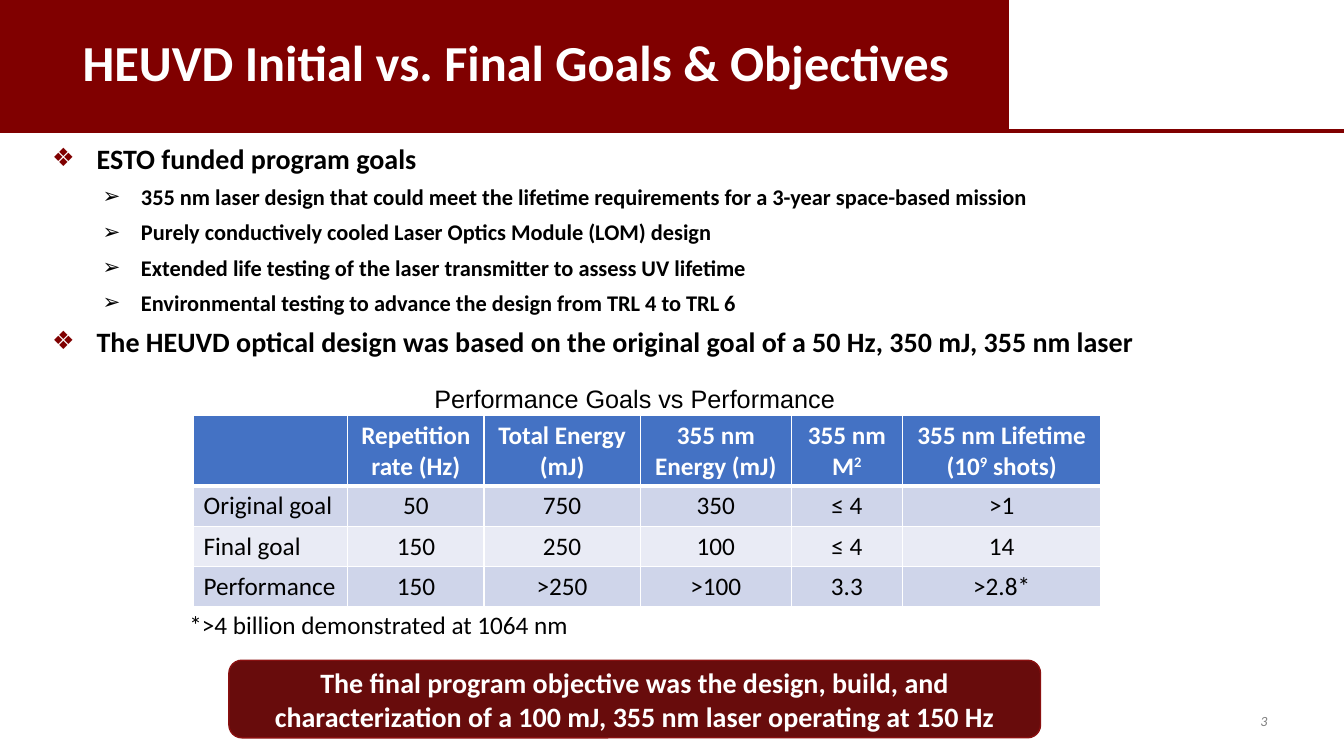
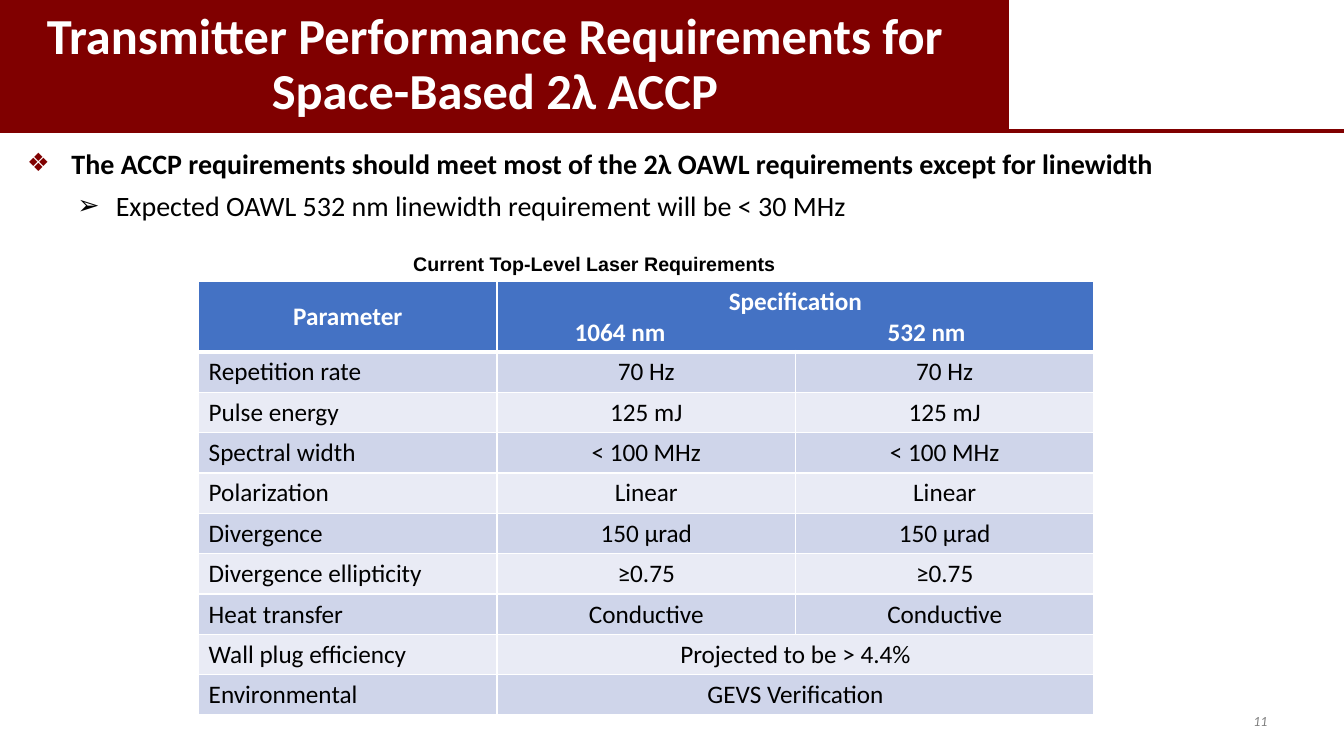
import lxml.etree
import pptx
import pptx.dml.color
import pptx.enum.shapes
import pptx.enum.text
import pptx.oxml.ns
import pptx.util

Inches = pptx.util.Inches
Pt = pptx.util.Pt
qn = pptx.oxml.ns.qn
ALIGN = pptx.enum.text.PP_ALIGN
ANCHOR = pptx.enum.text.MSO_ANCHOR
SHAPE = pptx.enum.shapes.MSO_SHAPE

COLORS = {
    "maroon": "800000",
    "callout": "680C0C",
    "callout_edge": "8A1010",
    "header": "4472C4",
    "band_dark": "CFD5EA",
    "band_light": "E9EBF5",
    "white": "FFFFFF",
    "black": "000000",
    "gray": "808080",
}
BULLETS = [
    {"char": "❖", "size": 90, "color": "maroon", "left": 0.44, "hang": 0.44},
    {"char": "➢", "size": 95, "color": "black", "left": 0.88, "hang": 0.38},
]
HEADER_HEIGHT = 0.7
ROW_HEIGHT = 0.4


def rgb(name):
    return pptx.dml.color.RGBColor.from_string(COLORS[name])


def add_xml(parent, tag, **attributes):
    return lxml.etree.SubElement(parent, qn(tag), attributes)


def add_run(paragraph, text, size, color="black", bold=False, italic=False,
            font="Calibri", superscript=False):
    run = paragraph.add_run()
    run.text = text
    run.font.name = font
    run.font.size = Pt(size)
    run.font.bold = bold
    run.font.italic = italic
    run.font.color.rgb = rgb(color)
    if superscript:
        run.font._element.set("baseline", "30000")


def add_text(slide, box, text, size, align=ALIGN.LEFT, anchor=ANCHOR.TOP,
             line_spacing=None, **style):
    frame = slide.shapes.add_textbox(*map(Inches, box)).text_frame
    frame.word_wrap = True
    frame.vertical_anchor = anchor
    paragraph = frame.paragraphs[0]
    paragraph.alignment = align
    paragraph.line_spacing = line_spacing
    add_run(paragraph, text, size, **style)


def add_panel(slide, kind, box, fill, edge):
    panel = slide.shapes.add_shape(kind, *map(Inches, box))
    panel.shadow.inherit = False
    panel.fill.solid()
    panel.fill.fore_color.rgb = rgb(fill)
    panel.line.color.rgb = rgb(edge)
    panel.line.width = Pt(1)
    return panel


def add_callout(slide, box, text):
    frame = add_panel(slide, SHAPE.ROUNDED_RECTANGLE, box, "callout", "callout_edge").text_frame
    frame.word_wrap = True
    frame.vertical_anchor = ANCHOR.MIDDLE
    frame.paragraphs[0].alignment = ALIGN.CENTER
    add_run(frame.paragraphs[0], text, 20, "white", bold=True)


def add_framed_slide(deck, title, title_box, number):
    slide = deck.slides.add_slide(deck.slide_layouts[6])
    add_panel(slide, SHAPE.RECTANGLE, (0, 0, 10, 1.28), "maroon", "maroon")
    rule = slide.shapes.add_connector(
        pptx.enum.shapes.MSO_CONNECTOR.STRAIGHT,
        Inches(0), Inches(1.3), deck.slide_width, Inches(1.3))
    rule.line.color.rgb = rgb("maroon")
    rule.line.width = Pt(3)
    add_xml(rule._element.spPr, "a:effectLst")
    add_text(slide, title_box, title, 36, ALIGN.CENTER, ANCHOR.MIDDLE, 0.9,
             color="white", bold=True)
    add_text(slide, (11.17, 6.95, 1.5, 0.4), str(number), 10, ALIGN.RIGHT, ANCHOR.MIDDLE,
             color="gray", italic=True)
    return slide


def set_bullet(paragraph, level):
    bullet = BULLETS[level]
    properties = paragraph._p.get_or_add_pPr()
    properties.set("marL", str(Inches(bullet["left"])))
    properties.set("indent", str(-Inches(bullet["hang"])))
    color = add_xml(properties, "a:buClr")
    add_xml(color, "a:srgbClr", val=COLORS[bullet["color"]])
    add_xml(properties, "a:buSzPct", val=str(bullet["size"] * 1000))
    add_xml(properties, "a:buFont", typeface="Arial")
    add_xml(properties, "a:buChar", char=bullet["char"])


def add_bullets(slide, box, points):
    frame = slide.shapes.add_textbox(*map(Inches, box)).text_frame
    frame.word_wrap = True
    for index, (level, text, size, bold) in enumerate(points):
        paragraph = frame.add_paragraph() if index else frame.paragraphs[0]
        set_bullet(paragraph, level)
        paragraph.level = level
        paragraph.space_after = Pt(6)
        add_run(paragraph, text, size, bold=bold)


def set_borders(cell, top, bottom):
    properties = cell._tc.get_or_add_tcPr()
    widths = {"a:lnL": 1, "a:lnR": 1, "a:lnT": top, "a:lnB": bottom}
    for position, (side, width) in enumerate(widths.items()):
        border = lxml.etree.Element(qn(side), {"w": str(Pt(width))})
        add_xml(add_xml(border, "a:solidFill"), "a:srgbClr", val=COLORS["white"])
        properties.insert(position, border)


def fill_cell(cell, parts, align, color, bold):
    paragraph = cell.text_frame.paragraphs[0]
    paragraph.alignment = align
    for index, part in enumerate(parts):
        add_run(paragraph, part, 18, color, bold, superscript=index % 2 == 1)


def add_grid(slide, left, top, widths, rows):
    height = HEADER_HEIGHT + ROW_HEIGHT * (len(rows) - 1)
    grid = slide.shapes.add_table(
        len(rows), len(widths), Inches(left), Inches(top),
        Inches(sum(widths)), Inches(height)).table
    for column, width in zip(grid.columns, widths):
        column.width = Inches(width)
    for r, values in enumerate(rows):
        is_header = r == 0
        grid.rows[r].height = Inches(HEADER_HEIGHT if is_header else ROW_HEIGHT)
        fill = "header" if is_header else ("band_dark" if r % 2 else "band_light")
        for c in range(len(widths)):
            cell = grid.cell(r, c)
            cell.fill.solid()
            cell.fill.fore_color.rgb = rgb(fill)
            set_borders(cell, 3 if r == 1 else 1, 3 if is_header else 1)
        for c, value in enumerate(values):
            parts = (value,) if isinstance(value, str) else value
            align = ALIGN.CENTER if is_header or c else ALIGN.LEFT
            fill_cell(grid.cell(r, c), parts, align, "white" if is_header else "black", is_header)
        if len(values) < len(widths):
            grid.cell(r, len(values) - 1).merge(grid.cell(r, len(widths) - 1))
    return grid


def add_wavelengths(cell, wavelengths, centers):
    paragraph = cell.text_frame.add_paragraph()
    paragraph.alignment = ALIGN.LEFT
    stops = add_xml(paragraph._p.get_or_add_pPr(), "a:tabLst")
    for wavelength, center in zip(wavelengths, centers):
        add_xml(stops, "a:tab", pos=str(Inches(center)), algn="ctr")
        add_run(paragraph, "\t" + wavelength, 18, "white", bold=True)


def add_goals_slide(deck):
    slide = add_framed_slide(
        deck, "HEUVD Initial vs. Final Goals & Objectives", (0.22, 0, 9.8, 1.3), 3)
    add_callout(slide, (2.27, 6.55, 8.05, 0.77),
                "The final program objective was the design, build, and characterization "
                "of a 100 mJ, 355 nm laser operating at 150 Hz")
    add_grid(slide, 1.92, 4.12, [1.53, 1.35, 1.55, 1.5, 1.1, 1.97], [
        ["", "Repetition rate (Hz)", "Total Energy (mJ)", "355 nm Energy (mJ)",
         ("355 nm M", "2"), ("355 nm Lifetime (10", "9", " shots)")],
        ["Original goal", "50", "750", "350", "≤ 4", ">1"],
        ["Final goal", "150", "250", "100", "≤ 4", "14"],
        ["Performance", "150", ">250", ">100", "3.3", ">2.8*"],
    ])
    add_bullets(slide, (0.42, 1.35, 12.4, 2.71), [
        (0, "ESTO funded program goals", 20, True),
        (1, "355 nm laser design that could meet the lifetime requirements "
            "for a 3-year space-based mission", 16, True),
        (1, "Purely conductively cooled Laser Optics Module (LOM) design", 16, True),
        (1, "Extended life testing of the laser transmitter to assess UV lifetime", 16, True),
        (1, "Environmental testing to advance the design from TRL 4 to TRL 6", 16, True),
        (0, "The HEUVD optical design was based on the original goal "
            "of a 50 Hz, 350 mJ, 355 nm laser", 20, True),
    ])
    add_text(slide, (3.87, 3.75, 4.85, 0.4), "Performance Goals vs Performance", 18,
             ALIGN.CENTER, font="Arial")
    add_text(slide, (1.78, 6, 4.18, 0.4), "*>4 billion demonstrated at 1064 nm", 18)


def add_requirements_slide(deck):
    slide = add_framed_slide(
        deck, "Transmitter Performance Requirements for Space-Based 2λ ACCP",
        (0.25, 0, 9.32, 1.3), 11)
    add_bullets(slide, (0.17, 1.4, 13, 0.75), [
        (0, "The ACCP requirements should meet most of the 2λ OAWL requirements "
            "except for linewidth", 20, True),
        (1, "Expected OAWL 532 nm linewidth requirement will be < 30 MHz", 20, False),
    ])
    add_text(slide, (3.72, 2.45, 4.35, 0.34), "Current Top-Level Laser Requirements", 14,
             ALIGN.CENTER, font="Arial", bold=True)
    same_for_both = [
        ("Repetition rate", "70 Hz"),
        ("Pulse energy", "125 mJ"),
        ("Spectral width", "< 100 MHz"),
        ("Polarization", "Linear"),
        ("Divergence", "150 µrad"),
        ("Divergence ellipticity", "≥0.75"),
        ("Heat transfer", "Conductive"),
    ]
    requirements = add_grid(slide, 1.97, 2.79, [2.96] * 3, [
        ["Parameter", "Specification"],
        *[[parameter, value, value] for parameter, value in same_for_both],
        ["Wall plug efficiency", "Projected to be > 4.4%"],
        ["Environmental", "GEVS Verification"],
    ])
    requirements.cell(0, 0).vertical_anchor = ANCHOR.MIDDLE
    add_wavelengths(requirements.cell(0, 1), ["1064 nm", "532 nm"], [1.12, 4.16])


def main():
    deck = pptx.Presentation()
    deck.slide_width = Inches(13.33)
    deck.slide_height = Inches(7.5)
    add_goals_slide(deck)
    add_requirements_slide(deck)
    deck.save("out.pptx")


if __name__ == "__main__":
    main()
